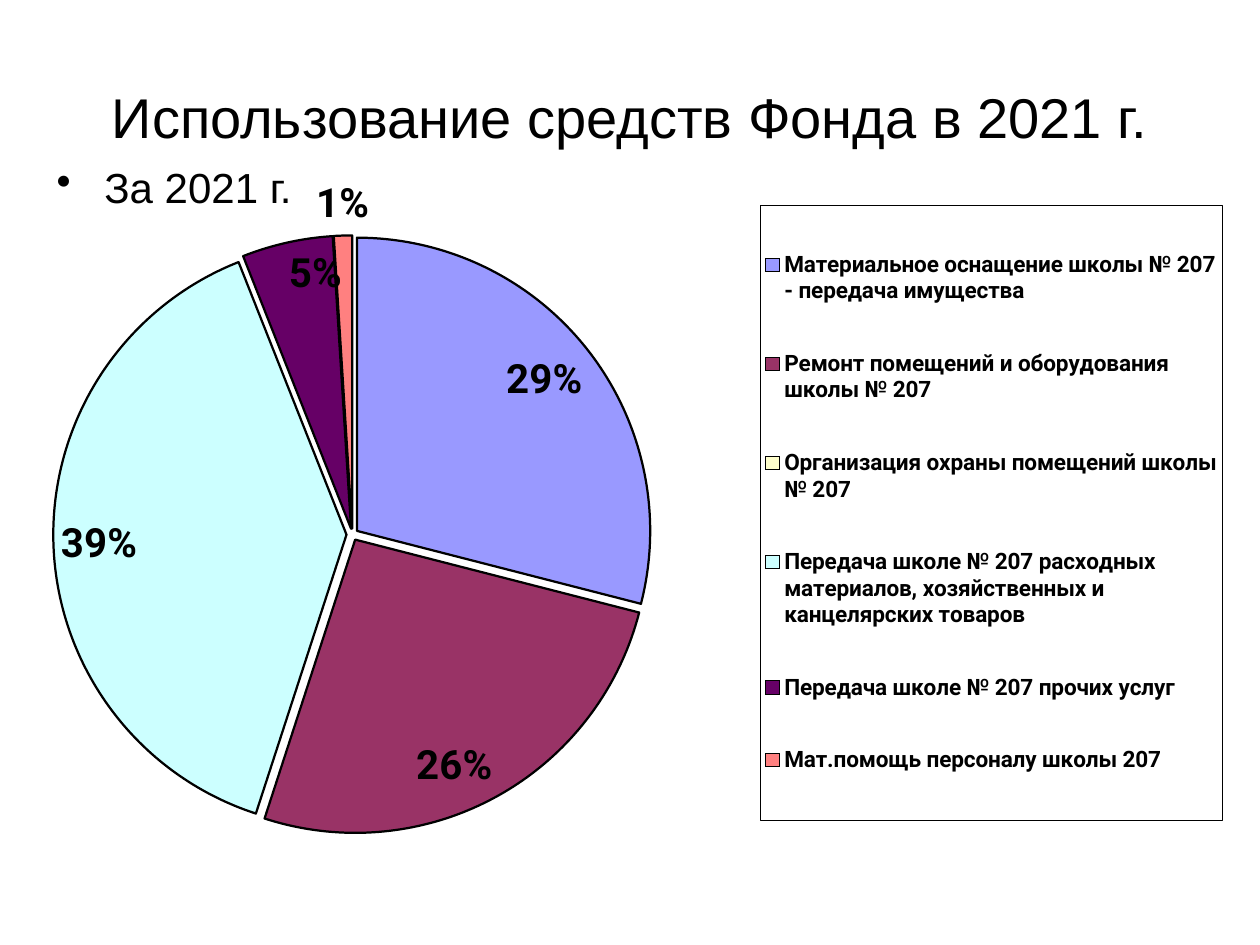
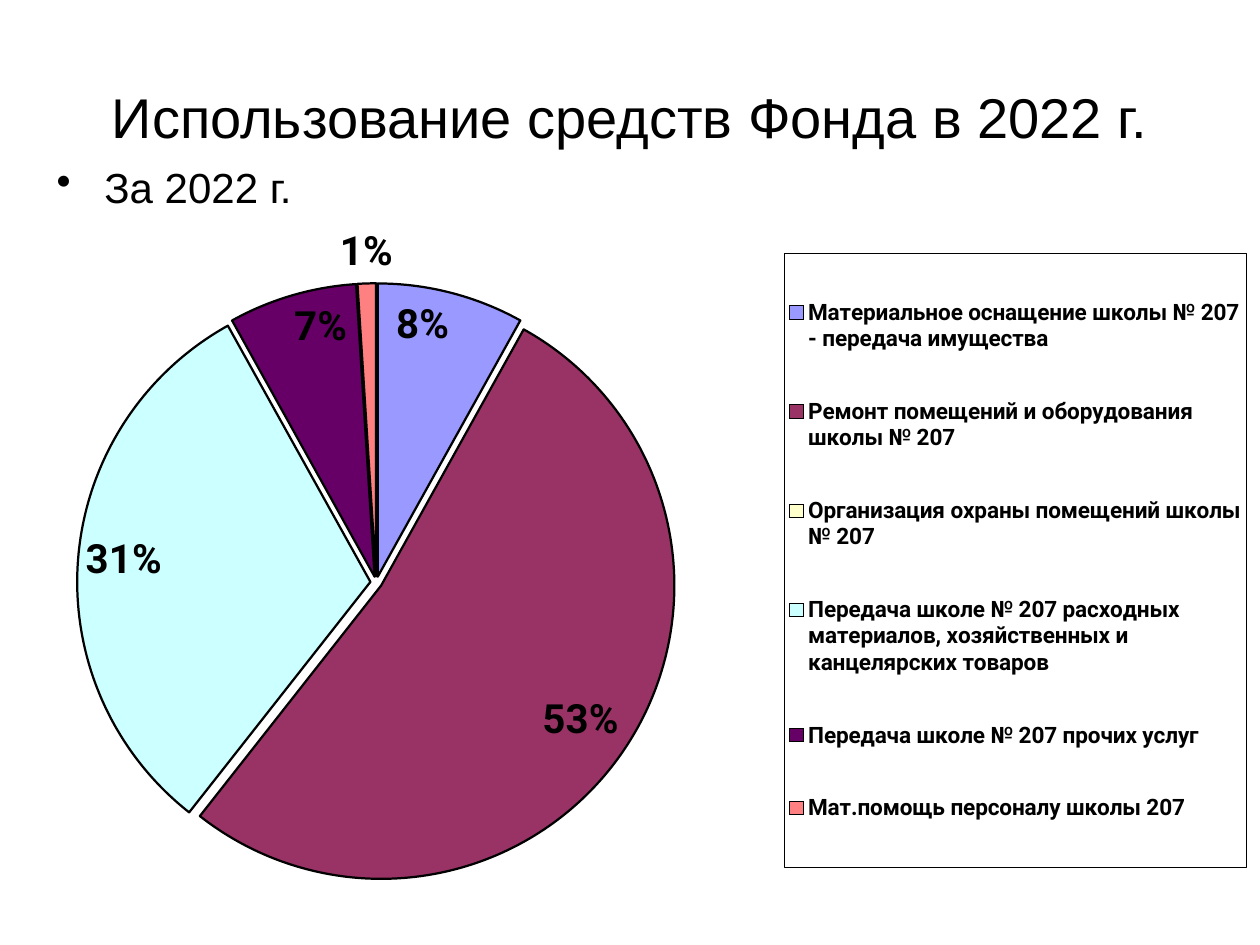
from pptx import Presentation
from pptx.chart.data import CategoryChartData as ChartData
from pptx.dml.color import RGBColor
from pptx.enum.chart import XL_CHART_TYPE as ChartType
from pptx.enum.chart import XL_LABEL_POSITION as LabelPosition
from pptx.enum.chart import XL_LEGEND_POSITION as LegendPosition
from pptx.enum.text import MSO_ANCHOR as Anchor
from pptx.enum.text import PP_ALIGN as Align
from pptx.oxml import parse_xml
from pptx.util import Inches, Pt

CHART_NS = "http://schemas.openxmlformats.org/drawingml/2006/chart"
DRAW_NS = "http://schemas.openxmlformats.org/drawingml/2006/main"
NAMESPACES = f'xmlns:c="{CHART_NS}" xmlns:a="{DRAW_NS}"'
CHART_TAG = "{" + CHART_NS + "}"

COLORS = {
    "ink": "000000",
    "equipment": "9999FF",
    "repair": "993366",
    "security": "FFFFCC",
    "supplies": "CCFFFF",
    "services": "660066",
    "aid": "FF8080",
}
INK = RGBColor.from_string(COLORS["ink"])
CATEGORIES = {
    "equipment": "Материальное оснащение школы № 207 - передача имущества",
    "repair": "Ремонт помещений и оборудования школы № 207",
    "security": "Организация охраны помещений школы № 207",
    "supplies": "Передача школе № 207 расходных материалов, хозяйственных и канцелярских товаров",
    "services": "Передача школе № 207 прочих услуг",
    "aid": "Мат.помощь персоналу школы 207",
}
FORMATS = {
    "title": {"name": "Arial", "size": Pt(32)},
    "body": {"name": "Arial", "size": Pt(24)},
    "label": {"name": "Roboto", "size": Pt(23), "bold": True},
    "legend": {"name": "Roboto", "size": Pt(12.9), "bold": True},
}
YEARS = [
    {"year": 2021, "shares": [29, 26, 0, 39, 5, 1], "left": -0.98, "top": 1.28},
    {"year": 2022, "shares": [8, 52, 0, 31, 7, 1], "left": -0.79, "top": 1.66},
]
TEXTS = [
    ("title", "Использование средств Фонда в {} г.", (0.5, 0.3, 9, 1.25)),
    ("body", "За {} г.", (0.35, 1.23, 9.21, 5.91)),
]
CHART_SIZE = (10.79, 5.81)
PLOT_SHARES = (0.13, 0.1, 0.44, 0.82)
LEGEND_SHARES = (0.65, 0.06, 0.34, 0.84)


def apply_format(font, kind):
    for attribute, value in FORMATS[kind].items():
        setattr(font, attribute, value)
    font.color.rgb = INK


def place(parent, index, shares, target=""):
    for old in parent.findall(CHART_TAG + "layout"):
        parent.remove(old)
    modes = '<c:xMode val="edge"/><c:yMode val="edge"/>'
    sizes = "".join(f'<c:{key} val="{share}"/>' for key, share in zip("xywh", shares))
    parent.insert(index, parse_xml(
        f"<c:layout {NAMESPACES}><c:manualLayout>{target}{modes}{sizes}"
        "</c:manualLayout></c:layout>"))


deck = Presentation()
deck.slide_width, deck.slide_height = Inches(10), Inches(7.5)

for entry in YEARS:
    page = deck.slides.add_slide(deck.slide_layouts[6])
    for kind, wording, frame in TEXTS:
        box = page.shapes.add_textbox(*map(Inches, frame))
        box.text_frame.word_wrap = True
        para = box.text_frame.paragraphs[0]
        span = para.add_run()
        span.text = wording.format(entry["year"])
        apply_format(span.font, kind)
        if kind == "title":
            box.text_frame.vertical_anchor = Anchor.MIDDLE
            para.alignment = Align.CENTER
        else:
            properties = para._p.get_or_add_pPr()
            properties.set("marL", str(Inches(0.38)))
            properties.set("indent", str(Inches(-0.38)))
            properties.append(parse_xml(f'<a:buChar {NAMESPACES} char="•"/>'))

    data = ChartData()
    data.categories = CATEGORIES.values()
    data.add_series("Series 1", entry["shares"])
    corner = (entry["left"], entry["top"])
    chart = page.shapes.add_chart(
        ChartType.PIE, *map(Inches, corner + CHART_SIZE), data).chart
    chart.has_title = False
    apply_format(chart.font, "label")

    plot = chart.plots[0]
    plot.vary_by_categories = True
    series = plot.series[0]
    for index, name in enumerate(CATEGORIES):
        slice_format = series.points[index].format
        slice_format.fill.solid()
        slice_format.fill.fore_color.rgb = RGBColor.from_string(COLORS[name])
        slice_format.line.color.rgb = INK
        slice_format.line.width = Pt(1.28)
    first_point = series._element.find(CHART_TAG + "dPt")
    first_point.addprevious(parse_xml(f'<c:explosion {NAMESPACES} val="2"/>'))

    labels = series.data_labels
    labels.show_value = False
    labels.show_percentage = True
    labels.number_format = "0%"
    labels.number_format_is_linked = False
    labels.position = LabelPosition.INSIDE_END
    apply_format(labels.font, "label")
    aid_label = series.points[5].data_label
    apply_format(aid_label.font, "label")
    aid_label.position = LabelPosition.OUTSIDE_END
    aid_element = labels._element.find(CHART_TAG + "dLbl")
    for flag, value in {"showVal": "0", "showPercent": "1"}.items():
        aid_element.find(CHART_TAG + flag).set("val", value)
    aid_element.addprevious(parse_xml(
        f'<c:dLbl {NAMESPACES}><c:idx val="2"/><c:delete val="1"/></c:dLbl>'))

    chart.has_legend = True
    legend = chart.legend
    legend.position = LegendPosition.RIGHT
    legend.include_in_layout = False
    apply_format(legend.font, "legend")
    place(legend._element, 1, LEGEND_SHARES)
    legend._element.find(CHART_TAG + "txPr").addprevious(parse_xml(
        f'<c:spPr {NAMESPACES}><a:noFill/><a:ln w="{Pt(0.5)}"><a:solidFill>'
        f'<a:srgbClr val="{COLORS["ink"]}"/></a:solidFill></a:ln></c:spPr>'))
    place(plot._element.getparent(), 0, PLOT_SHARES, '<c:layoutTarget val="inner"/>')

deck.save("out.pptx")
